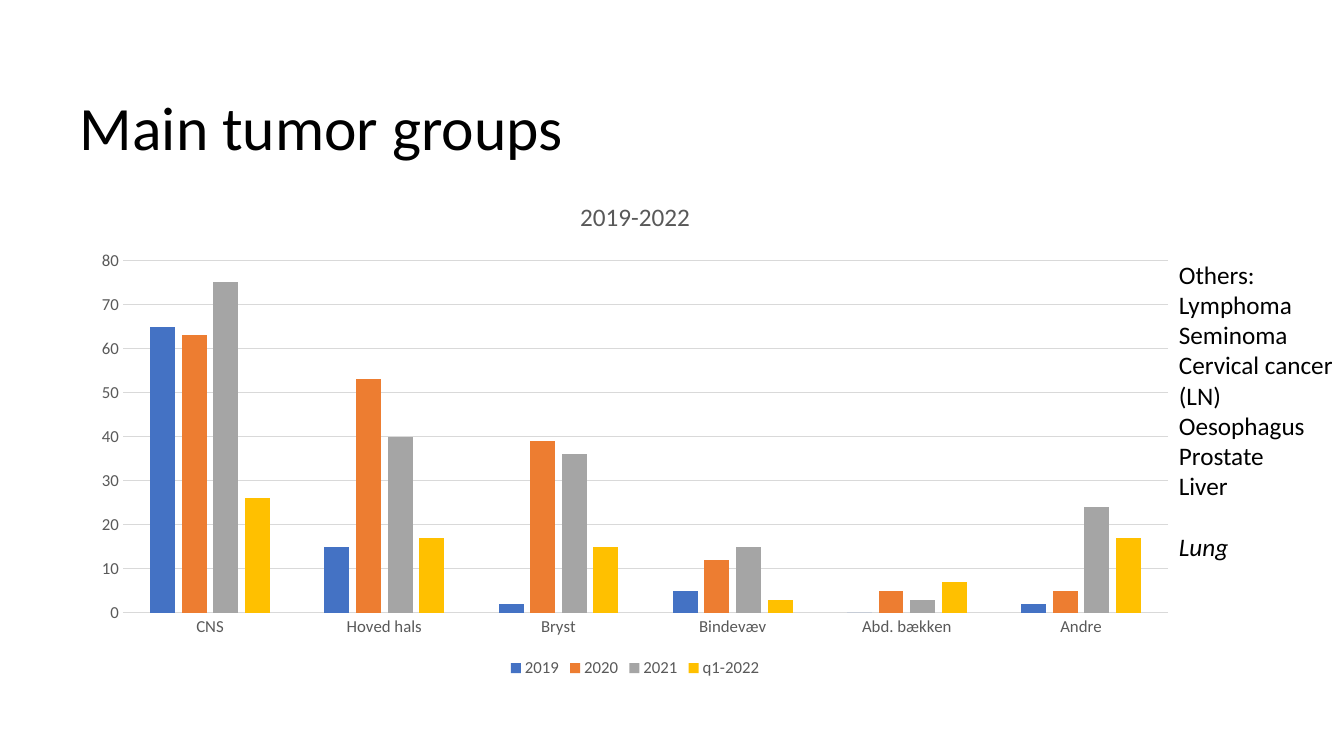
from pptx import Presentation
from pptx.chart.data import CategoryChartData
from pptx.dml.color import RGBColor
from pptx.enum.chart import XL_CHART_TYPE, XL_LEGEND_POSITION, XL_TICK_MARK
from pptx.enum.text import MSO_ANCHOR, MSO_AUTO_SIZE, PP_ALIGN
from pptx.util import Cm, Pt

CLUSTERED = XL_CHART_TYPE.COLUMN_CLUSTERED
LEGEND_BOTTOM = XL_LEGEND_POSITION.BOTTOM
NO_TICK = XL_TICK_MARK.NONE
ANCHOR_BOTTOM = MSO_ANCHOR.BOTTOM
NO_AUTOFIT = MSO_AUTO_SIZE.NONE
GROW = MSO_AUTO_SIZE.SHAPE_TO_FIT_TEXT
LEFT = PP_ALIGN.LEFT

BLACK = RGBColor(0x00, 0x00, 0x00)
DARK_GREY = RGBColor(0x59, 0x59, 0x59)
LIGHT_GREY = RGBColor(0xD9, 0xD9, 0xD9)
BLUE = RGBColor(0x44, 0x72, 0xC4)
ORANGE = RGBColor(0xED, 0x7D, 0x31)
GREY = RGBColor(0xA5, 0xA5, 0xA5)
YELLOW = RGBColor(0xFF, 0xC0, 0x00)

TUMOR_GROUPS = ["CNS", "Hoved hals", "Bryst", "Bindevæv", "Abd. bækken", "Andre"]
PERIODS = [
    ("2019", (65, 15, 2, 5, 0, 2), BLUE),
    ("2020", (63, 53, 39, 12, 5, 5), ORANGE),
    ("2021", (75, 40, 36, 15, 3, 24), GREY),
    ("q1-2022", (26, 17, 15, 3, 7, 17), YELLOW),
]
OTHERS = ["Others:", "Lymphoma", "Seminoma", "Cervical cancer (LN)",
          "Oesophagus", "Prostate", "Liver", "Lung"]


def style_font(font, size, color):
    font.name = "Calibri"
    font.size = Pt(size)
    font.bold = False
    font.color.rgb = color


def style_line(line):
    line.color.rgb = LIGHT_GREY
    line.width = Pt(0.75)


prs = Presentation()
prs.slide_width = Cm(33.87)
prs.slide_height = Cm(19.05)
slide = prs.slides.add_slide(prs.slide_layouts[5])

heading = slide.shapes.title
heading.left, heading.top = Cm(2.01), Cm(1.63)
heading.width, heading.height = Cm(27.99), Cm(2.49)
heading_frame = heading.text_frame
heading_frame.auto_size = NO_AUTOFIT
heading_frame.word_wrap = True
heading_frame.vertical_anchor = ANCHOR_BOTTOM
heading_frame.margin_left = heading_frame.margin_right = 0
heading_frame.margin_top = heading_frame.margin_bottom = 0
heading_line = heading_frame.paragraphs[0]
heading_line.alignment = LEFT
heading_line.line_spacing = 0.9
heading_run = heading_line.add_run()
heading_run.text = "Main tumor groups"
style_font(heading_run.font, 44, BLACK)

tumor_data = CategoryChartData()
tumor_data.categories = TUMOR_GROUPS
for period, counts, color in PERIODS:
    tumor_data.add_series(period, counts)
chart = slide.shapes.add_chart(
    CLUSTERED, Cm(2.01), Cm(4.52), Cm(27.99), Cm(12.67), tumor_data).chart
style_font(chart.font, 10, BLACK)

chart.has_title = True
chart_title_run = chart.chart_title.text_frame.paragraphs[0].add_run()
chart_title_run.text = "2019-2022"
style_font(chart_title_run.font, 18, DARK_GREY)
chart.chart_title.include_in_layout = False

chart.has_legend = True
chart.legend.position = LEGEND_BOTTOM
chart.legend.include_in_layout = False
style_font(chart.legend.font, 12, DARK_GREY)

group_axis, count_axis = chart.category_axis, chart.value_axis
for axis in (group_axis, count_axis):
    axis.major_tick_mark = NO_TICK
    axis.minor_tick_mark = NO_TICK
    style_font(axis.tick_labels.font, 12, DARK_GREY)
style_line(group_axis.format.line)
count_axis.format.line.fill.background()
count_axis.has_major_gridlines = True
style_line(count_axis.major_gridlines.format.line)
count_axis.minimum_scale = 0
count_axis.maximum_scale = 80
count_axis.major_unit = 10

columns = chart.plots[0]
columns.vary_by_categories = False
columns.gap_width = 219
columns.overlap = -27
for series, (period, counts, color) in zip(columns.series, PERIODS):
    series.format.fill.solid()
    series.format.fill.fore_color.rgb = color

others_frame = slide.shapes.add_textbox(
    Cm(29.46), Cm(6.4), Cm(4.39), Cm(7.95)).text_frame
others_frame.word_wrap = True
others_frame.auto_size = GROW
for index, tumor in enumerate(OTHERS):
    entry = others_frame.add_paragraph() if index else others_frame.paragraphs[0]
    entry_run = entry.add_run()
    entry_run.text = tumor
    style_font(entry_run.font, 18, BLACK)
    if tumor == "Lung":
        entry.space_before = Pt(22)
        entry_run.font.italic = True

prs.save("out.pptx")
